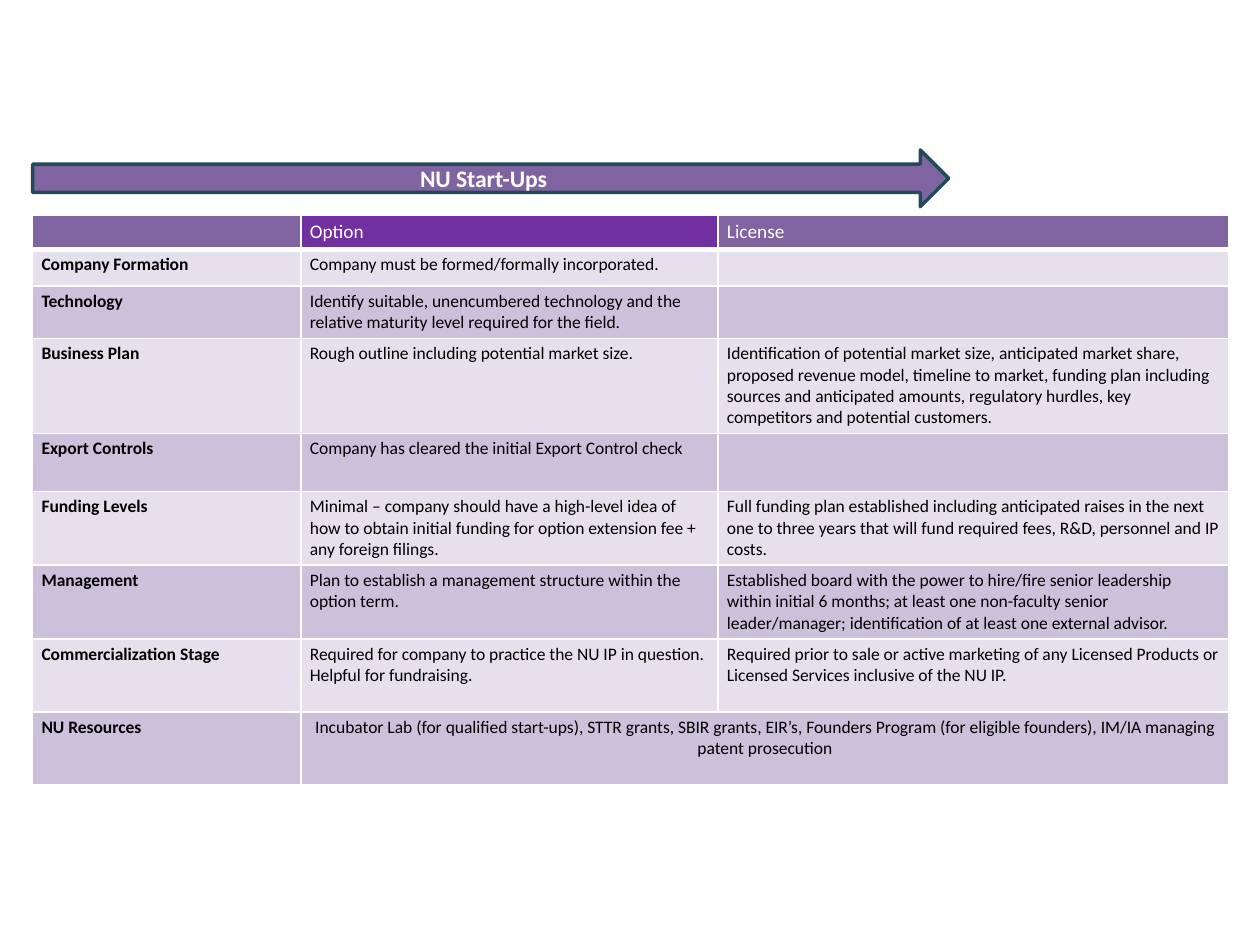
from lxml import etree
from pptx import Presentation
from pptx.dml.color import RGBColor
from pptx.enum.shapes import MSO_SHAPE
from pptx.enum.text import MSO_ANCHOR, PP_ALIGN
from pptx.oxml.ns import qn
from pptx.util import Inches, Pt

WHITE = RGBColor(0xFF, 0xFF, 0xFF)
BLACK = RGBColor(0, 0, 0)
MAUVE = RGBColor(0x80, 0x64, 0xA2)
PURPLE = RGBColor(0x70, 0x30, 0xA0)
PALE = RGBColor(0xE6, 0xE0, 0xEC)
LILAC = RGBColor(0xCC, 0xC1, 0xDA)
TEAL = RGBColor(0x21, 0x4B, 0x57)
FONT = "Calibri"

COLS = [2.13, 3.31, 4.05]
HEIGHTS = [0.26, 0.29, 0.41, 0.75, 0.46, 0.58, 0.58, 0.58, 0.58]
ROWS = [
    ("", "Option", "License"),
    ("Company Formation", "Company must be formed/formally incorporated.", ""),
    ("Technology",
     "Identify suitable, unencumbered technology and the relative maturity "
     "level required for the field.", ""),
    ("Business Plan", "Rough outline including potential market size.",
     "Identification of potential market size, anticipated market share, "
     "proposed revenue model, timeline to market, funding plan including "
     "sources and anticipated amounts, regulatory hurdles, key competitors "
     "and potential customers."),
    ("Export Controls",
     "Company has cleared the initial Export Control check", ""),
    ("Funding Levels",
     "Minimal – company should have a high-level idea of how to obtain "
     "initial funding for option extension fee + any foreign filings.",
     "Full funding plan established including anticipated raises in the next "
     "one to three years that will fund required fees, R&D, personnel and "
     "IP costs."),
    ("Management",
     "Plan to establish a management structure within the option term.",
     "Established board with the power to hire/fire senior leadership within "
     "initial 6 months; at least one non-faculty senior leader/manager; "
     "identification of at least one external advisor."),
    ("Commercialization Stage",
     "Required for company to practice the NU IP in question. Helpful for "
     "fundraising.",
     "Required prior to sale or active marketing of any Licensed Products or "
     "Licensed Services inclusive of the NU IP."),
    ("NU Resources",
     "Incubator Lab (for qualified start-ups), STTR grants, SBIR grants, "
     "EIR’s, Founders Program (for eligible founders), IM/IA managing patent "
     "prosecution", ""),
]


def set_font(font, size, color, bold=False):
    font.name, font.size, font.bold = FONT, Pt(size), bold
    font.color.rgb = color


def set_edges(cell, base):
    """Draw white borders; they must precede the fill in the cell XML."""
    props = cell._tc.get_or_add_tcPr()
    for i, side in enumerate("LRTB"):
        width = base if side == "B" else 1
        line = etree.Element(qn("a:ln" + side), w=str(Pt(width)))
        fill = etree.SubElement(line, qn("a:solidFill"))
        etree.SubElement(fill, qn("a:srgbClr"), val=str(WHITE))
        props.insert(i, line)


def fill_cell(cell, text, size, color, bold, back, base):
    cell.margin_left = cell.margin_right = Inches(0.07)
    cell.margin_top = cell.margin_bottom = Inches(0.04)
    cell.fill.solid()
    cell.fill.fore_color.rgb = back
    set_edges(cell, base)
    para = cell.text_frame.paragraphs[0]
    if text:
        para.text = text
        set_font(para.runs[0].font, size, color, bold)
    else:
        # Keep empty cells from stretching their row
        etree.SubElement(para._p, qn("a:endParaRPr"), sz=str(size * 100))


def add_arrow(slide, left, top, width, height):
    arrow = slide.shapes.add_shape(MSO_SHAPE.RIGHT_ARROW, left, top, width, height)
    arrow.shadow.inherit = False
    arrow.fill.solid()
    arrow.fill.fore_color.rgb = MAUVE
    arrow.line.color.rgb = TEAL
    arrow.line.width = Pt(2)
    frame = arrow.text_frame
    frame.text = "NU Start-Ups"
    frame.vertical_anchor = MSO_ANCHOR.MIDDLE
    para = frame.paragraphs[0]
    para.alignment = PP_ALIGN.CENTER
    set_font(para.runs[0].font, 13.5, WHITE, True)


def add_grid(slide, left, top, width, height):
    table = slide.shapes.add_table(
        len(ROWS), len(COLS), left, top, width, height).table
    for col, size in zip(table.columns, COLS):
        col.width = Inches(size)
    for row, size in zip(table.rows, HEIGHTS):
        row.height = Inches(size)
    for r, texts in enumerate(ROWS):
        for c, text in enumerate(texts):
            cell = table.cell(r, c)
            if r == 0:  # header
                back = PURPLE if c == 1 else MAUVE
                fill_cell(cell, text, 11, WHITE, False, back, 3)
            else:  # banded body
                back = PALE if r % 2 else LILAC
                fill_cell(cell, text, 10, BLACK, c == 0, back, 1)
    # Resources span both stages
    last = len(ROWS) - 1
    wide = table.cell(last, 1)
    wide.merge(table.cell(last, 2))
    wide.text_frame.paragraphs[0].alignment = PP_ALIGN.CENTER


def main():
    deck = Presentation()
    deck.slide_width, deck.slide_height = Inches(10), Inches(7.5)
    slide = deck.slides.add_slide(deck.slide_layouts[6])
    left = Inches(0.26)
    add_grid(slide, left, Inches(1.71), Inches(sum(COLS)), Inches(sum(HEIGHTS)))
    add_arrow(slide, left, Inches(1.19), Inches(7.27), Inches(0.45))
    deck.save("out.pptx")


if __name__ == "__main__":
    main()
